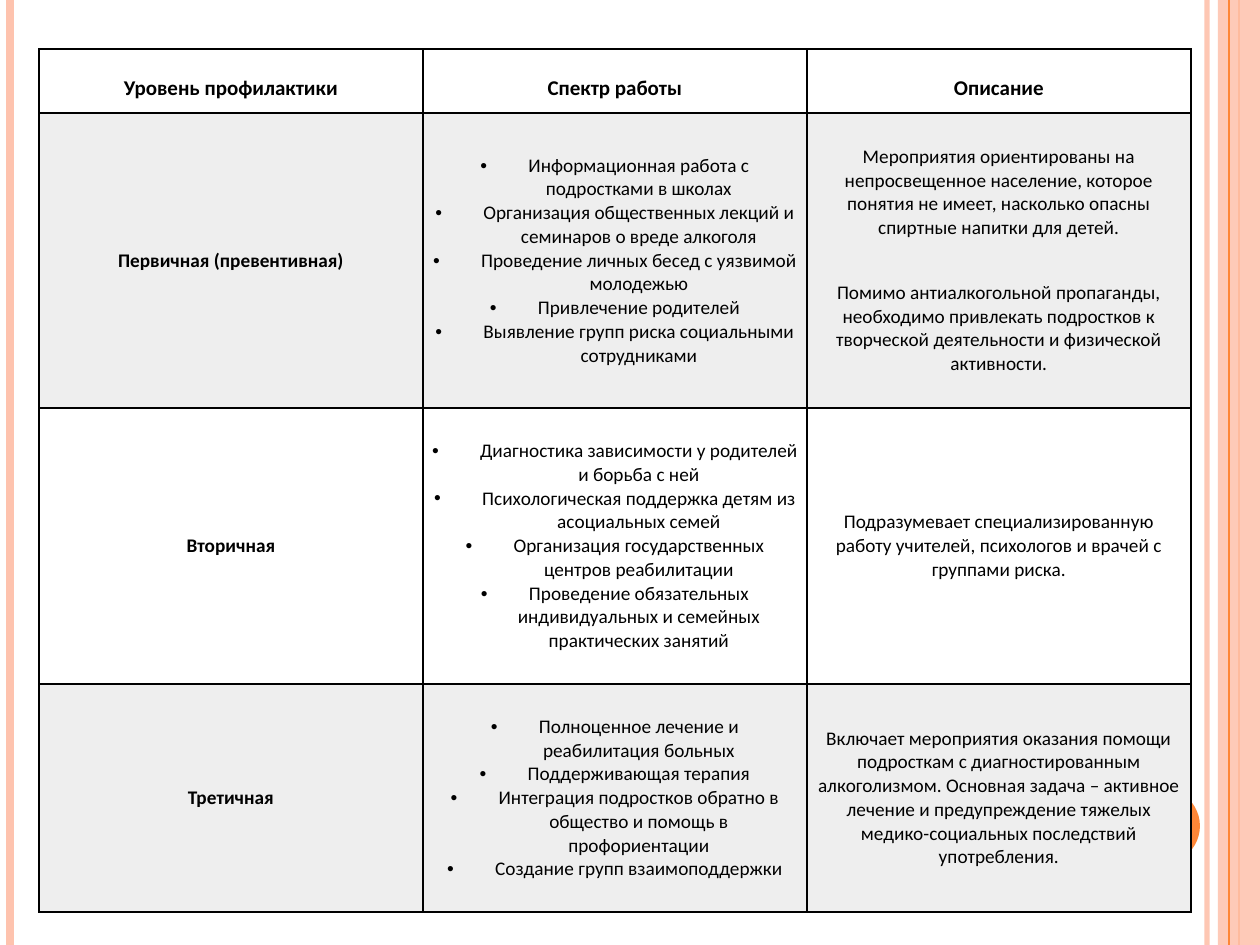
from lxml.etree import SubElement
from pptx import Presentation
from pptx.dml.color import RGBColor
from pptx.enum.shapes import MSO_CONNECTOR, MSO_SHAPE
from pptx.enum.text import MSO_ANCHOR, PP_ALIGN
from pptx.oxml import parse_xml
from pptx.oxml.ns import nsdecls, qn
from pptx.util import Emu, Pt

THEME = {
    "peach": RGBColor.from_string("FEC3AE"),
    "orange": RGBColor.from_string("FE8637"),
    "band": RGBColor.from_string("EEEEEE"),
    "text": RGBColor.from_string("000000"),
    "border": "000000",
    "font": "Calibri",
    "head": Pt(12),
    "body": Pt(11),
    "gap": Pt(23.4),
}


def px(n):
    return Emu(round(n * 914400 / 126))


def set_alpha(fill_parent, percent):
    clr = next(fill_parent.iter(qn("a:srgbClr")))
    SubElement(clr, qn("a:alpha")).set("val", str(percent * 1000))


prs = Presentation()
prs.slide_width, prs.slide_height = px(1260), px(945)
s = prs.slides.add_slide(prs.slide_layouts[6])

decor = [
    ("line", 1207, "peach", 3, 93),
    ("line", 10, "peach", 4.5, 100),
    ("line", 1239, "orange", 1.5, 100),
    ("rect", (1218, 0, 42, 945), "peach", 0, 87),
    ("line", 1229, "orange", 0.75, 100),
    ("oval", (1124, 788, 76, 76), "orange", 0, 100),
]
presets = {"rect": MSO_SHAPE.RECTANGLE, "oval": MSO_SHAPE.OVAL}
for kind, place, color, width, alpha in decor:
    if kind == "line":
        sp = s.shapes.add_connector(
            MSO_CONNECTOR.STRAIGHT, px(place), 0, px(place), px(945))
        sp.line.color.rgb = THEME[color]
        sp.line.width = Pt(width)
        SubElement(sp._element.spPr, qn("a:effectLst"))
    else:
        sp = s.shapes.add_shape(presets[kind], *map(px, place))
        sp.fill.solid()
        sp.fill.fore_color.rgb = THEME[color]
        sp.line.fill.background()
        sp.shadow.inherit = False
    if alpha < 100:
        set_alpha(sp._element.spPr, alpha)

rows = [
    (["Уровень профилактики"], ["Спектр работы"], ["Описание"]),
    (
        ["Первичная (превентивная)"],
        [
            "Информационная работа с подростками в школах",
            "Организация общественных лекций и семинаров о вреде алкоголя",
            "Проведение личных бесед с уязвимой молодежью",
            "Привлечение родителей",
            "Выявление групп риска социальными сотрудниками",
        ],
        [
            "Мероприятия ориентированы на непросвещенное население, которое "
            "понятия не имеет, насколько опасны спиртные напитки для детей.",
            "Помимо антиалкогольной пропаганды, необходимо привлекать подростков "
            "к творческой деятельности и физической активности.",
        ],
    ),
    (
        ["Вторичная"],
        [
            "Диагностика зависимости у родителей и борьба с ней",
            "Психологическая поддержка детям из асоциальных семей",
            "Организация государственных центров реабилитации",
            "Проведение обязательных индивидуальных и семейных практических занятий",
        ],
        [
            "Подразумевает специализированную работу учителей, психологов "
            "и врачей с группами риска.",
        ],
    ),
    (
        ["Третичная"],
        [
            "Полноценное лечение и реабилитация больных",
            "Поддерживающая терапия",
            "Интеграция подростков обратно в общество и помощь в профориентации",
            "Создание групп взаимоподдержки",
        ],
        [
            "Включает мероприятия оказания помощи подросткам с диагностированным "
            "алкоголизмом. Основная задача – активное лечение и предупреждение "
            "тяжелых медико-социальных последствий употребления.",
        ],
    ),
]
heights = [64, 295, 276, 228]
col_width = 384

table = s.shapes.add_table(
    len(rows), 3, px(39), px(49), px(3 * col_width), px(sum(heights))).table
table.first_row = table.horz_banding = False
for col in table.columns:
    col.width = px(col_width)

cell_format = {"vertical_anchor": MSO_ANCHOR.MIDDLE}
for side in ("left", "right", "top", "bottom"):
    cell_format["margin_" + side] = px(8)

for i, (row, height) in enumerate(zip(rows, heights)):
    table.rows[i].height = px(height)
    for j, lines in enumerate(row):
        header, bulleted = i == 0, i > 0 and j == 1
        cell = table.cell(i, j)
        for name, value in cell_format.items():
            setattr(cell, name, value)
        if i % 2:
            cell.fill.solid()
            cell.fill.fore_color.rgb = THEME["band"]
        else:
            cell.fill.background()
        tcPr = cell._tc.get_or_add_tcPr()
        for k, edge in enumerate(("lnL", "lnR", "lnT", "lnB")):
            tcPr.insert(k, parse_xml(
                f'<a:{edge} {nsdecls("a")} w="12700"><a:solidFill>'
                f'<a:srgbClr val="{THEME["border"]}"/></a:solidFill></a:{edge}>'))

        tf = cell.text_frame
        font_format = {
            "name": THEME["font"],
            "size": THEME["head" if header else "body"],
            "bold": header or j == 0,
        }
        for n, line in enumerate(lines):
            p = tf.add_paragraph() if n else tf.paragraphs[0]
            p.alignment = PP_ALIGN.CENTER
            if header:
                p.line_spacing = THEME["gap"]
            if bulleted:
                pPr = p._p.get_or_add_pPr()
                pPr.set("marL", str(px(48)))
                pPr.set("indent", str(-px(48)))
                SubElement(pPr, qn("a:buFont")).set("typeface", "Arial")
                SubElement(pPr, qn("a:buChar")).set("char", "•")
                tab = SubElement(SubElement(pPr, qn("a:tabLst")), qn("a:tab"))
                tab.set("pos", str(px(63)))
                tab.set("algn", "l")
            else:
                p.space_after = THEME["gap"]
            r = p.add_run()
            r.text = line
            for name, value in font_format.items():
                setattr(r.font, name, value)
            r.font.color.rgb = THEME["text"]

prs.save("out.pptx")
